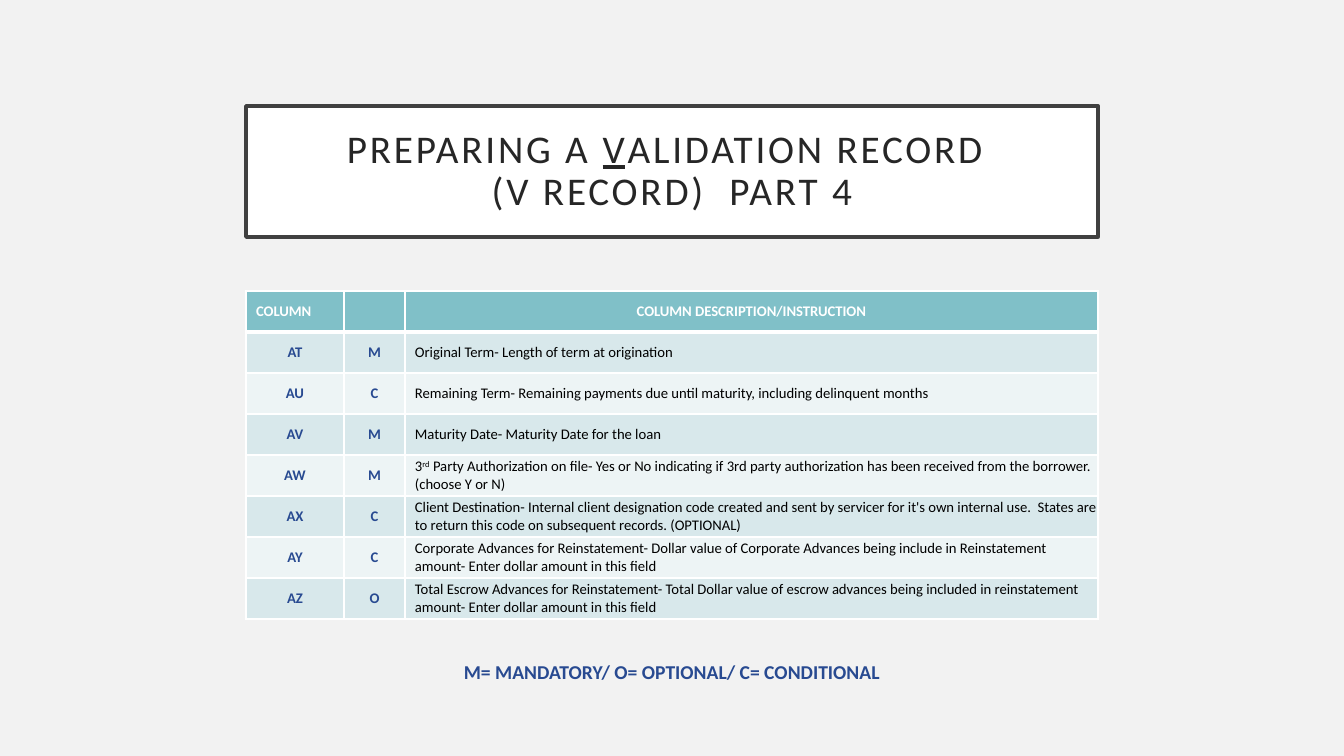
from lxml import etree
from pptx import Presentation, util as u
from pptx.dml.color import RGBColor
from pptx.enum import shapes, text
from pptx.oxml.ns import qn

PX = 914400 / 100.8
LEFT, WIDTH = 246, 852
BLUE, WHITE, BLACK = "284A91", "FFFFFF", "000000"
MID = text.PP_ALIGN.CENTER
NEAR = text.PP_ALIGN.LEFT


def px(*nums):
    return [u.Emu(round(n * PX)) for n in nums]


def style(para, size, color, bold, align):
    para.alignment = align
    font = para.font
    font.name, font.size, font.bold = "Calibri", u.Pt(size), bold
    font.color.rgb = RGBColor.from_string(color)


deck = Presentation()
deck.slide_width, deck.slide_height = px(1344, 756)
slide = deck.slides.add_slide(deck.slide_layouts[6])
back = slide.background.fill
back.solid()
back.fore_color.rgb = RGBColor.from_string("F2F2F2")

# Title in a framed box
box = slide.shapes.add_shape(shapes.MSO_SHAPE.RECTANGLE, *px(LEFT, 106, WIDTH, 131))
box.shadow.inherit = False
box.fill.solid()
box.fill.fore_color.rgb = RGBColor.from_string(WHITE)
box.line.color.rgb = RGBColor.from_string("404040")
box.line.width = u.Pt(2.5)
frame = box.text_frame
frame.word_wrap = True
frame.vertical_anchor = text.MSO_ANCHOR.MIDDLE
frame.margin_left, frame.margin_top, frame.margin_right, frame.margin_bottom = px(20, 20, 20, 20)
para = frame.paragraphs[0]
style(para, 28, "262626", False, MID)
para.line_spacing = 0.9
for words in ["PREPARING A ", "V", "ALIDATION RECORD ", "\n", "(V RECORD)  PART 4"]:
    if words == "\n":
        para.add_line_break()
        continue
    run = para.add_run()
    run.text = words
    run.font.underline = words == "V"
    run._r.get_or_add_rPr().set("spc", "200")

# Column table; ^ marks raised text
rows = [
    ("COLUMN", "", "COLUMN DESCRIPTION/INSTRUCTION"),
    ("AT", "M", "Original Term- Length of term at origination"),
    ("AU", "C", "Remaining Term- Remaining payments due until maturity, including delinquent months"),
    ("AV", "M", "Maturity Date- Maturity Date for the loan"),
    ("AW", "M", "3^rd^ Party Authorization on file- Yes or No indicating if 3rd party authorization "
     "has been received from the borrower. (choose Y or N)"),
    ("AX", "C", "Client Destination- Internal client designation code created and sent by servicer "
     "for it's own internal use.  States are to return this code on subsequent records. (OPTIONAL)"),
    ("AY", "C", "Corporate Advances for Reinstatement- Dollar value of Corporate Advances being "
     "include in Reinstatement amount- Enter dollar amount in this field"),
    ("AZ", "O", "Total Escrow Advances for Reinstatement- Total Dollar value of escrow advances "
     "being included in reinstatement amount- Enter dollar amount in this field"),
]
high = 41
grid = slide.shapes.add_table(len(rows), 3, *px(LEFT, 291, WIDTH, high * len(rows))).table
for col, wide in zip(grid.columns, px(98, 61, 693)):
    col.width = wide
for r, row in enumerate(rows):
    grid.rows[r].height = px(high)[0]
    for c, words in enumerate(row):
        cell = grid.cell(r, c)
        cell.vertical_anchor = text.MSO_ANCHOR.MIDDLE
        if r and c:
            cell.margin_left = px(10 if c == 2 else 0)[0]
            cell.margin_top = cell.margin_right = cell.margin_bottom = 0

        # Text
        para = cell.text_frame.paragraphs[0]
        color = WHITE if r == 0 else BLACK if c == 2 else BLUE
        align = NEAR if (r == 0) == (c == 0) and c != 1 else MID
        style(para, 10.5, color, r == 0 or c < 2, align)
        for i, part in enumerate(words.split("^")):
            run = para.add_run()
            run.text = part
            if i % 2:
                run._r.get_or_add_rPr().set("baseline", "30000")

        # Borders come before the fill
        props = cell._tc.get_or_add_tcPr()
        for side in "LRTB":
            thick = 3 if (r, side) in [(0, "B"), (1, "T")] else 1
            line = etree.SubElement(props, qn("a:ln" + side), w=str(u.Pt(thick)))
            solid = etree.SubElement(line, qn("a:solidFill"))
            etree.SubElement(solid, qn("a:srgbClr"), val=WHITE)
        cell.fill.solid()
        shade = "80C0C8" if r == 0 else "D8E8EB" if r % 2 else "EDF4F5"
        cell.fill.fore_color.rgb = RGBColor.from_string(shade)

# Key to the codes
key = slide.shapes.add_textbox(*px(452, 655, 440, 34)).text_frame
key.word_wrap = False
key.auto_size = text.MSO_AUTO_SIZE.SHAPE_TO_FIT_TEXT
para = key.paragraphs[0]
para.text = "M= MANDATORY/ O= OPTIONAL/ C= CONDITIONAL"
style(para, 14, BLUE, True, MID)

deck.save("out.pptx")
